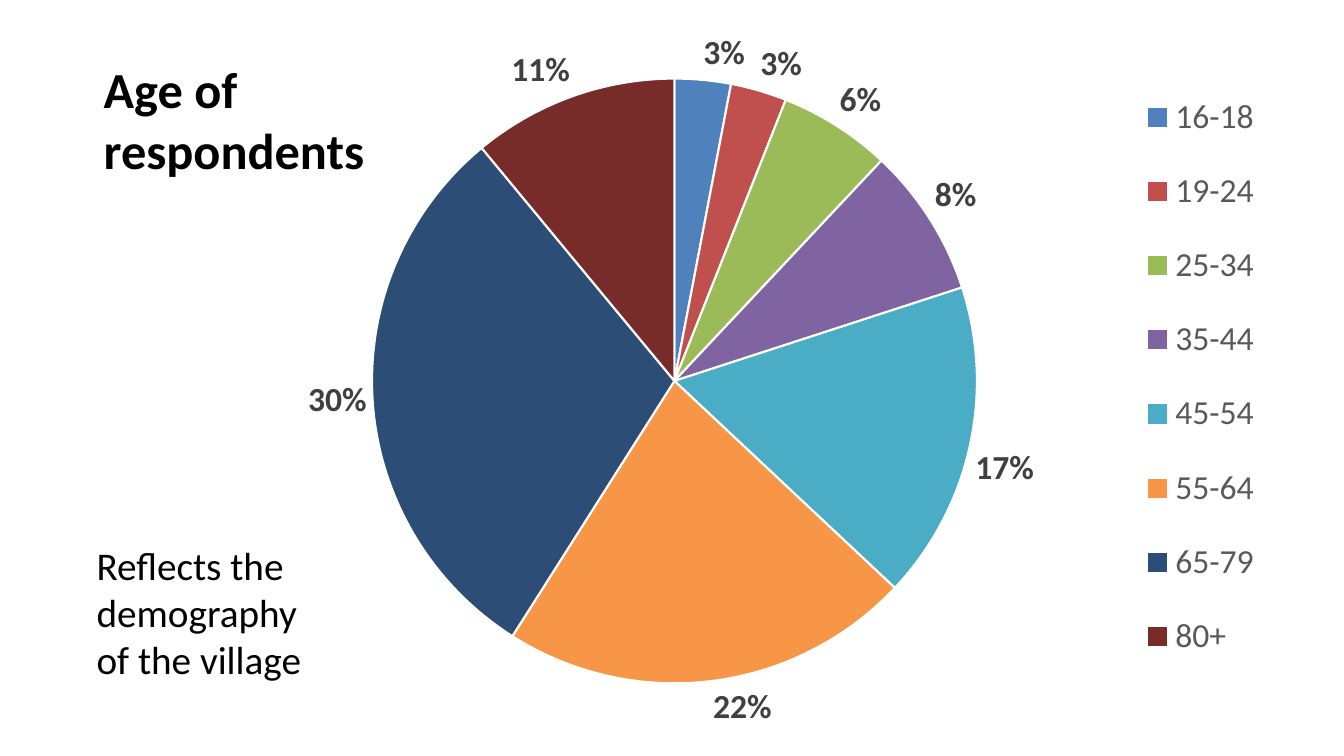
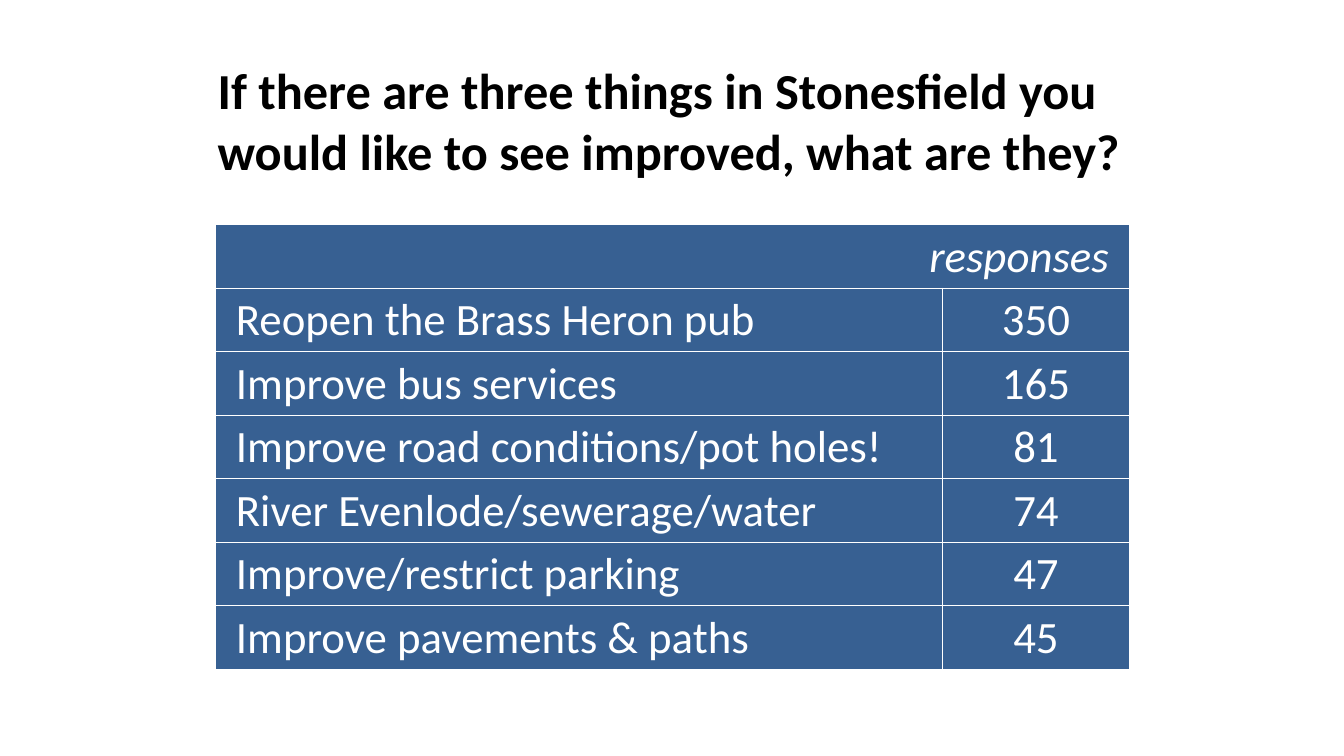
from lxml import etree
from pptx import Presentation
from pptx.chart.data import CategoryChartData
from pptx.dml.color import RGBColor
from pptx.enum.chart import XL_CHART_TYPE, XL_LABEL_POSITION, XL_LEGEND_POSITION
from pptx.enum.text import MSO_ANCHOR, PP_ALIGN
from pptx.oxml import parse_xml
from pptx.oxml.ns import nsdecls, qn
from pptx.util import Inches, Pt

FONT = "Calibri"
BLACK, WHITE, TABLE_BLUE = "000000", "FFFFFF", "376092"
TITLE = {"size": Pt(36), "bold": True}
NOTE = {"size": Pt(28)}
CELL = {"size": Pt(32)}
LABEL = {"size": Pt(24), "bold": True}
LEGEND = {"size": Pt(24)}

AGES = [
    ("16-18", 3, "4F81BD"),
    ("19-24", 3, "C0504D"),
    ("25-34", 6, "9BBB59"),
    ("35-44", 8, "8064A2"),
    ("45-54", 17, "4BACC6"),
    ("55-64", 22, "F79646"),
    ("65-79", 30, "2C4D75"),
    ("80+", 11, "772C2A"),
]
CHART_BOX = (0.52, 0.18, 12.3, 7.3)
PIE_BOX = (3.69, 0.78, 6, 6)
LEGEND_BOX = (11.21, 0.63, 1.4, 6.22)

IMPROVEMENTS = [
    ("Reopen the Brass Heron pub", "350"),
    ("Improve bus services", "165"),
    ("Improve road conditions/pot holes!", "81"),
    ("River Evenlode/sewerage/water", "74"),
    ("Improve/restrict parking", "47"),
    ("Improve pavements & paths", "45"),
]
COLUMN_WIDTHS = (7.21, 1.85)
ROW_HEIGHT = 0.63


def rgb(value):
    return RGBColor.from_string(value)


def style_font(font, color, formats):
    font.name = FONT
    font.color.rgb = rgb(color)
    for name, value in formats.items():
        setattr(font, name, value)


def add_text(s, box, text, formats):
    tf = s.shapes.add_textbox(*map(Inches, box)).text_frame
    tf.word_wrap = True
    r = tf.paragraphs[0].add_run()
    r.text = text
    style_font(r.font, BLACK, formats)


def chart_layout(box, target=""):
    left, top, width, height = CHART_BOX
    fractions = {
        "x": (box[0] - left) / width,
        "y": (box[1] - top) / height,
        "w": box[2] / width,
        "h": box[3] / height,
    }
    modes = '<c:xMode val="edge"/><c:yMode val="edge"/>'
    sizes = "".join(f'<c:{k} val="{v:.4f}"/>' for k, v in fractions.items())
    return parse_xml(
        f'<c:layout {nsdecls("c")}><c:manualLayout>{target}{modes}{sizes}'
        "</c:manualLayout></c:layout>"
    )


def place_in_chart(parent, index, layout):
    for old in parent.findall(qn("c:layout")):
        parent.remove(old)
    parent.insert(index, layout)


def add_age_chart(s):
    data = CategoryChartData()
    data.categories = [age for age, _, _ in AGES]
    data.add_series("Series 1", [share for _, share, _ in AGES])
    chart = s.shapes.add_chart(
        XL_CHART_TYPE.PIE, *map(Inches, CHART_BOX), data
    ).chart
    chart.has_title = False
    style_font(chart.font, BLACK, {"size": Pt(10)})

    chart.has_legend = True
    legend = chart.legend
    legend.position = XL_LEGEND_POSITION.RIGHT
    legend.include_in_layout = False
    style_font(legend.font, "595959", LEGEND)

    plot = chart.plots[0]
    plot.vary_by_categories = True
    for i, (_, _, color) in enumerate(AGES):
        form = plot.series[0].points[i].format
        form.fill.solid()
        form.fill.fore_color.rgb = rgb(color)
        form.line.color.rgb = rgb(WHITE)
        form.line.width = Pt(1.5)

    plot.has_data_labels = True
    labels = plot.data_labels
    formats = {
        "show_percentage": True,
        "show_value": False,
        "number_format": "0%",
        "number_format_is_linked": False,
        "position": XL_LABEL_POSITION.OUTSIDE_END,
    }
    for name, value in formats.items():
        setattr(labels, name, value)
    style_font(labels.font, "404040", LABEL)

    plot_area = chart.element.find(".//" + qn("c:plotArea"))
    inner = '<c:layoutTarget val="inner"/>'
    place_in_chart(plot_area, 0, chart_layout(PIE_BOX, inner))
    legend_xml = chart.element.find(".//" + qn("c:legend"))
    place_in_chart(legend_xml, 1, chart_layout(LEGEND_BOX))


def add_borders(cell):
    props = cell._tc.get_or_add_tcPr()
    for i, side in enumerate(("lnL", "lnR", "lnT", "lnB")):
        line = etree.Element(qn(f"a:{side}"), w=str(Pt(1)))
        fill = etree.SubElement(line, qn("a:solidFill"))
        etree.SubElement(fill, qn("a:srgbClr"), val=WHITE)
        props.insert(i, line)


def fill_cell(cell, text, align, right_margin, italic):
    formats = {
        "margin_left": Inches(0.2),
        "margin_right": Inches(right_margin),
        "margin_top": Inches(0.01),
        "margin_bottom": 0,
        "vertical_anchor": MSO_ANCHOR.MIDDLE,
    }
    for name, value in formats.items():
        setattr(cell, name, value)
    cell.fill.solid()
    cell.fill.fore_color.rgb = rgb(TABLE_BLUE)
    add_borders(cell)
    if text:
        p = cell.text_frame.paragraphs[0]
        p.alignment = align
        p.space_after = Pt(6)
        r = p.add_run()
        r.text = text
        style_font(r.font, WHITE, {**CELL, "italic": italic})


def add_improvement_table(s):
    rows = [("responses", "")] + IMPROVEMENTS
    size = (sum(COLUMN_WIDTHS), ROW_HEIGHT * len(rows))
    table = s.shapes.add_table(
        len(rows), 2, *map(Inches, (2.14, 2.23, *size))
    ).table
    for column, width in zip(table.columns, COLUMN_WIDTHS):
        column.width = Inches(width)
    table.cell(0, 0).merge(table.cell(0, 1))
    for i, row in enumerate(rows):
        table.rows[i].height = Inches(ROW_HEIGHT)
        header = i == 0
        first_align = PP_ALIGN.RIGHT if header else PP_ALIGN.LEFT
        first_margin = 0.2 if header else 0.01
        fill_cell(table.cell(i, 0), row[0], first_align, first_margin, header)
        fill_cell(table.cell(i, 1), row[1], PP_ALIGN.CENTER, 0.2, False)


def main():
    prs = Presentation()
    prs.slide_width, prs.slide_height = Inches(13.33), Inches(7.5)
    blank = prs.slide_layouts[6]

    s = prs.slides.add_slide(blank)
    add_age_chart(s)
    add_text(s, (0.93, 0.53, 3.32, 1.31), "Age of respondents", TITLE)
    add_text(
        s, (0.86, 5.32, 2.29, 1.51), "Reflects the demography of the village", NOTE
    )

    s = prs.slides.add_slide(blank)
    add_text(
        s,
        (2.06, 0.54, 9.39, 1.31),
        "If there are three things in Stonesfield you would like to see improved, "
        "what are they?",
        TITLE,
    )
    add_improvement_table(s)
    prs.save("out.pptx")


if __name__ == "__main__":
    main()
